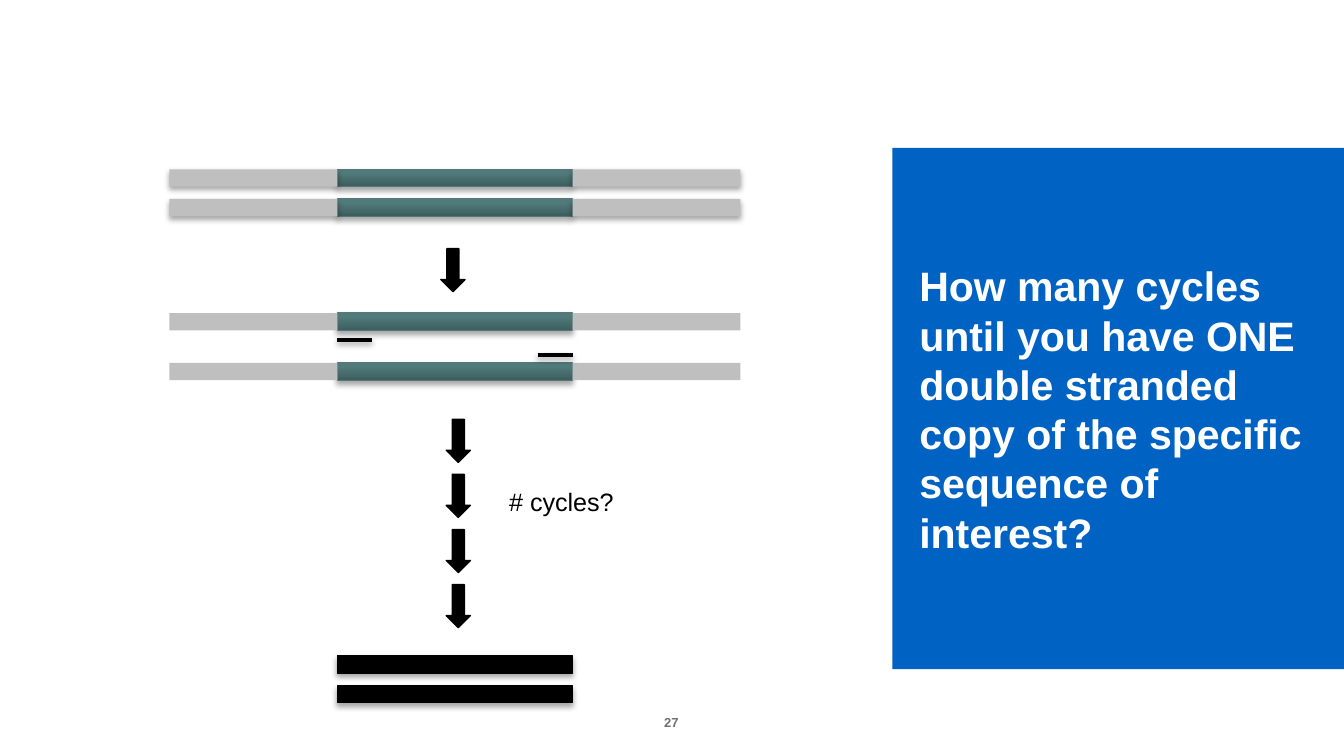
import pptx
import pptx.util
import pptx.dml.color
import pptx.enum.shapes
import pptx.enum.text
import pptx.oxml
import pptx.oxml.ns
from lxml import etree

Inches = pptx.util.Inches
Shapes = pptx.enum.shapes.MSO_SHAPE
Anchor = pptx.enum.text.MSO_ANCHOR
Align = pptx.enum.text.PP_ALIGN
FLANK, TARGET, THICKNESS = 1.25, 1.75, 0.13


def color(value):
    return pptx.dml.color.RGBColor.from_string(value)


def add_shadow(effects, alpha=35, distance=1.8):
    shadow = etree.SubElement(
        effects, pptx.oxml.ns.qn("a:outerShdw"), blurRad=str(pptx.util.Pt(3.1)),
        dist=str(pptx.util.Pt(distance)), dir="5400000", rotWithShape="0")
    black = etree.SubElement(shadow, pptx.oxml.ns.qn("a:srgbClr"), val="000000")
    etree.SubElement(black, pptx.oxml.ns.qn("a:alpha"), val=str(alpha * 1000))


def add_block(page, kind, left, top, width, height, fill, line=None, shadow=False):
    block = page.shapes.add_shape(
        kind, Inches(left), Inches(top), Inches(width), Inches(height))
    block.shadow.inherit = False
    if shadow:
        add_shadow(block._element.spPr.find(pptx.oxml.ns.qn("a:effectLst")))
    block.fill.solid()
    block.fill.fore_color.rgb = color(fill)
    if line:
        block.line.color.rgb = color(line)
        block.line.width = pptx.util.Pt(0.75)
    else:
        block.line.fill.background()
    return block


def add_target(page, left, top):
    target = add_block(page, Shapes.RECTANGLE, left, top, TARGET, THICKNESS,
                       "517B7B", "557879", True)
    target.fill.gradient()
    target.fill.gradient_angle = 90
    stops = target.fill.gradient_stops
    for stop, position, value in zip(stops, (0, 0.8), ("3D5D5E", "517B7B")):
        stop.position = position
        stop.color.rgb = color(value)


def add_strand(page, left, top, shadow):
    add_target(page, left + FLANK, top)
    for offset in (0, FLANK + TARGET):
        add_block(page, Shapes.RECTANGLE, left + offset, top, FLANK, THICKNESS,
                  "BFBFBF", shadow=shadow)


def add_primer(page, left, top):
    primer = page.shapes.add_connector(
        pptx.enum.shapes.MSO_CONNECTOR.STRAIGHT,
        Inches(left), Inches(top), Inches(left + 0.26), Inches(top))
    primer.line.color.rgb = color("000000")
    primer.line.width = pptx.util.Pt(2)
    effects = etree.SubElement(primer._element.spPr, pptx.oxml.ns.qn("a:effectLst"))
    add_shadow(effects, 37, 1.6)


def add_arrow(page, left, top):
    add_block(page, Shapes.DOWN_ARROW, left, top, 0.18, 0.32, "000000", "000000")


def format_text(para, size, value, bold=False):
    for span in para.runs:
        span.font.name = "Arial"
        span.font.size = pptx.util.Pt(size)
        span.font.bold = bold
        span.font.color.rgb = color(value)


def add_label(page, text, left, top, width, height, size, value):
    box = page.shapes.add_textbox(
        Inches(left), Inches(top), Inches(width), Inches(height))
    frame = box.text_frame
    frame.word_wrap = True
    frame.text = text
    format_text(frame.paragraphs[0], size, value)
    return frame


def add_diagram(page, left, top):
    for offset in (0, 0.22):
        add_strand(page, left, top + offset, True)
    add_arrow(page, left + 2.02, top + 0.59)
    for offset in (1.07, 1.44):
        add_strand(page, left, top + offset, False)
    add_primer(page, left + FLANK, top + 1.27)
    add_primer(page, left + FLANK + TARGET - 0.26, top + 1.38)
    for step in range(4):
        add_arrow(page, left + 2.06, top + 1.86 + step * 0.41)
    add_label(page, "# cycles?", left + 2.43, top + 2.31, 1.02, 0.37, 13.5, "000000")
    for offset in (3.62, 3.84):
        add_block(page, Shapes.RECTANGLE, left + FLANK, top + offset, TARGET,
                  THICKNESS, "000000", "000000", True)


def fill_question(panel, left, top, width, height):
    panel.left, panel.top = Inches(left), Inches(top)
    panel.width, panel.height = Inches(width), Inches(height)
    panel.fill.solid()
    panel.fill.fore_color.rgb = color("0063C3")
    frame = panel.text_frame
    frame.text = ("How many cycles until you have ONE double stranded copy "
                  "of the specific sequence of interest?")
    frame.word_wrap = True
    frame.auto_size = pptx.enum.text.MSO_AUTO_SIZE.NONE
    frame.vertical_anchor = Anchor.MIDDLE
    frame.margin_left, frame.margin_right = Inches(0.2), Inches(0.3)
    frame.margin_top = frame.margin_bottom = Inches(0.05)
    para = frame.paragraphs[0]
    para.alignment = Align.LEFT
    para.line_spacing = 1.0
    para.space_before = pptx.util.Pt(0)
    properties = para._p.get_or_add_pPr()
    properties.set("marL", "0")
    properties.set("indent", "0")
    etree.SubElement(properties, pptx.oxml.ns.qn("a:buNone"))
    format_text(para, 22, "FFFFFF", True)


def add_page_number(page, left, top, width, height):
    frame = add_label(page, "27", left, top, width, height, 7, "716F73")
    frame.margin_left = frame.margin_right = 0
    frame.margin_top = frame.margin_bottom = 0
    frame.vertical_anchor = Anchor.BOTTOM
    frame.paragraphs[0].alignment = Align.CENTER
    frame.paragraphs[0].runs[0].font.bold = True


def main():
    deck = pptx.Presentation()
    deck.slide_width = Inches(10)
    deck.slide_height = deck.slide_width * 9 // 16
    page = deck.slides.add_slide(deck.slide_layouts[1])
    title = page.shapes.title._element
    title.getparent().remove(title)
    add_page_number(page, 4.54, 5.13, 0.91, 0.3)
    fill_question(page.placeholders[1], 6.64, 1.1, 3.36, 3.88)
    add_diagram(page, 1.26, 1.26)
    deck.save("out.pptx")


if __name__ == "__main__":
    main()
